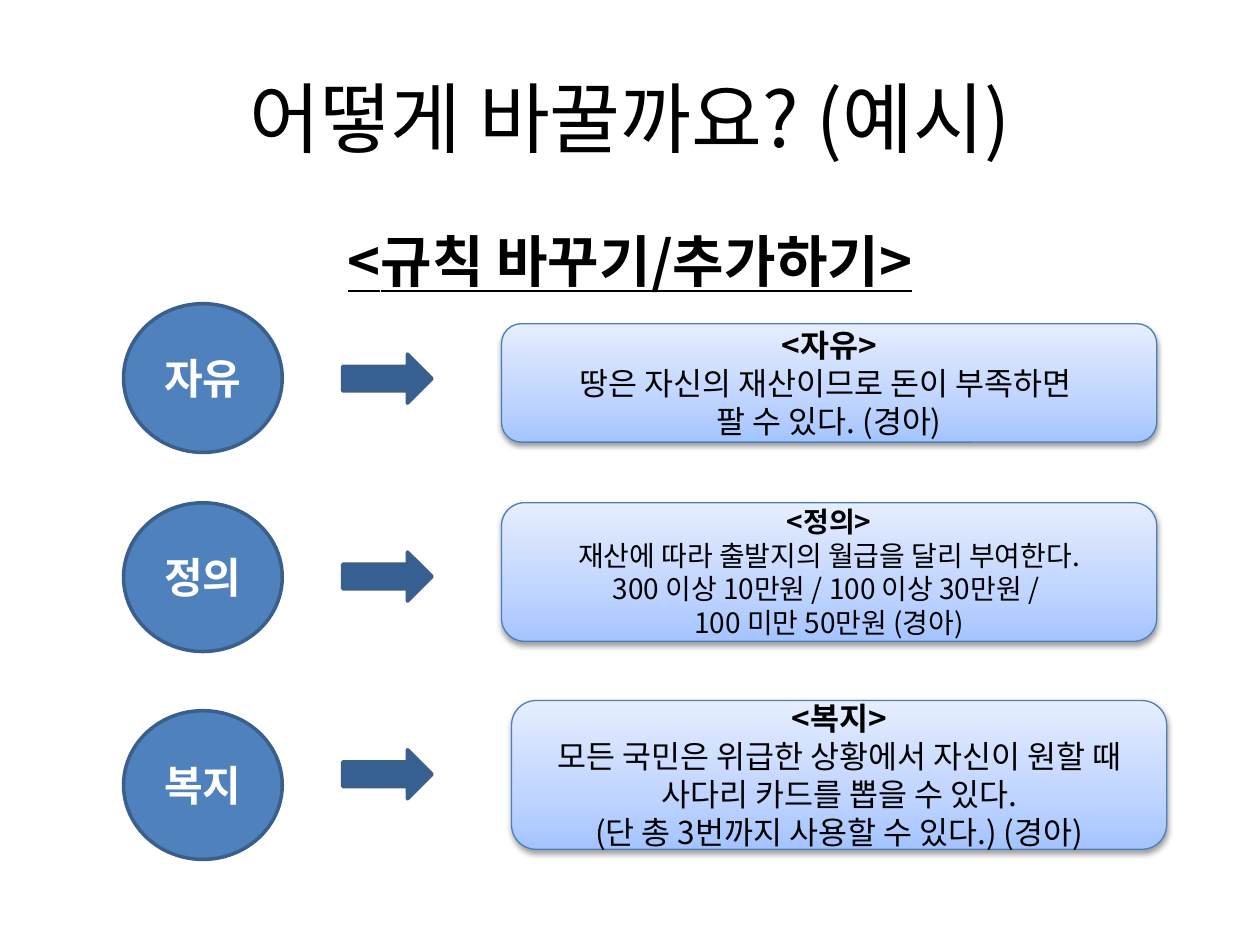
from lxml import etree
from pptx import Presentation
from pptx.dml.color import RGBColor
from pptx.enum import shapes as kinds, text as t
from pptx.oxml import parse_xml
from pptx.oxml.ns import qn
from pptx.util import Pt

# Content: value, circle top, arrow top, card (left, top, height), text size, lines
TITLE = "어떻게 바꿀까요? (예시)"
SUBTITLE = "<규칙 바꾸기/추가하기>"
RULES = [
    ("자유", 173.5, 202.3, (286.6, 185, 67.7), 18,
     ["땅은 자신의 재산이므로 돈이 부족하면 ", "팔 수 있다. (경아)"]),
    ("정의", 287.3, 315.4, (286.6, 287.3, 79.2), 16,
     ["재산에 따라 출발지의 월급을 달리 부여한다.",
      "300 이상 10만원 / 100 이상 30만원 / ", "100 미만 50만원 (경아)"]),
    ("복지", 406.1, 428.4, (292.3, 400.3, 85), 18,
     ["모든 국민은 위급한 상황에서 자신이 원할 때 사다리 카드를 뽑을 수 있다.",
      "(단 총 3번까지 사용할 수 있다.) (경아)"]),
]

FONT = "Noto Sans CJK KR"
BLACK = RGBColor(0x00, 0x00, 0x00)
WHITE = RGBColor(0xFF, 0xFF, 0xFF)
BLUE = RGBColor(0x4F, 0x81, 0xBD)
ARROW_BLUE = RGBColor(0x37, 0x60, 0x92)
OUTLINE = RGBColor(0x3A, 0x5F, 0x8C)
CARD_LINE = RGBColor(0x4B, 0x7E, 0xBC)
CARD_STOPS = [(0, "A4C4FF"), (35, "BFD4FF"), (100, "E6EEFF")]
A_NS = "http://schemas.openxmlformats.org/drawingml/2006/main"

prs = Presentation()
prs.slide_width, prs.slide_height = Pt(720), Pt(540)
slide = prs.slides.add_slide(prs.slide_layouts[5])


def place(shape, left, top, width, height):
    shape.left, shape.top = Pt(left), Pt(top)
    shape.width, shape.height = Pt(width), Pt(height)


def write(shape, lines, size, color, bold_lines=0, anchor=t.MSO_ANCHOR.MIDDLE):
    """Centred lines, the first bold_lines of them bold."""
    frame = shape.text_frame
    frame.text = "\n".join(lines)
    frame.word_wrap = True
    frame.auto_size = t.MSO_AUTO_SIZE.NONE
    frame.vertical_anchor = anchor
    for number, paragraph in enumerate(frame.paragraphs):
        paragraph.alignment = t.PP_ALIGN.CENTER
        for run in paragraph.runs:
            font = run.font
            font.name, font.size = FONT, Pt(size)
            font.bold = number < bold_lines
            font.color.rgb = color
            east_asian = etree.SubElement(run._r.rPr, qn("a:ea"))
            east_asian.set("typeface", FONT)


def add_shape(kind, box, fill, line, line_width):
    shape = slide.shapes.add_shape(kind, *map(Pt, box))
    shape.shadow.inherit = False
    if fill is not None:
        shape.fill.solid()
        shape.fill.fore_color.rgb = fill
    shape.line.color.rgb = line
    shape.line.width = Pt(line_width)
    return shape


def style_card(card):
    """Three-stop gradient, dark at the bottom, and a soft shadow below."""
    card.fill.gradient()
    card.fill.gradient_angle = 90
    properties = card._element.spPr
    stops = properties.find(".//" + qn("a:gsLst"))
    for old in list(stops):
        stops.remove(old)
    for position, color in CARD_STOPS:
        stops.append(parse_xml(
            f'<a:gs xmlns:a="{A_NS}" pos="{position * 1000}">'
            f'<a:srgbClr val="{color}"/></a:gs>'))
    properties.find(qn("a:effectLst")).append(parse_xml(
        f'<a:outerShdw xmlns:a="{A_NS}" blurRad="{Pt(3.1)}" dist="{Pt(1.6)}" '
        'dir="5400000" rotWithShape="0"><a:srgbClr val="000000">'
        '<a:alpha val="38000"/></a:srgbClr></a:outerShdw>'))


# Title and subtitle
title = slide.shapes.title
place(title, 36, 21.6, 648, 90)
write(title, [TITLE], 44, BLACK)

subtitle = slide.shapes.add_textbox(Pt(36), Pt(126), Pt(648), Pt(356.4))
write(subtitle, [SUBTITLE], 32, BLACK, 1, t.MSO_ANCHOR.TOP)
subtitle.text_frame.paragraphs[0].runs[0].font.underline = True

# One row per value: circle, arrow, card
KIND = kinds.MSO_SHAPE
for value, circle_top, arrow_top, card_box, size, lines in RULES:
    circle = add_shape(KIND.OVAL, (70.6, circle_top, 90.7, 85), BLUE, OUTLINE, 2)
    write(circle, [value], 24, WHITE, 1)

    add_shape(KIND.RIGHT_ARROW, (195.8, arrow_top, 51.1, 28.1),
              ARROW_BLUE, OUTLINE, 2)

    left, top, height = card_box
    card = add_shape(KIND.ROUNDED_RECTANGLE, (left, top, 374.4, height),
                     None, CARD_LINE, 0.75)
    style_card(card)
    write(card, [f"<{value}>"] + lines, size, BLACK, 1)

prs.save("out.pptx")
